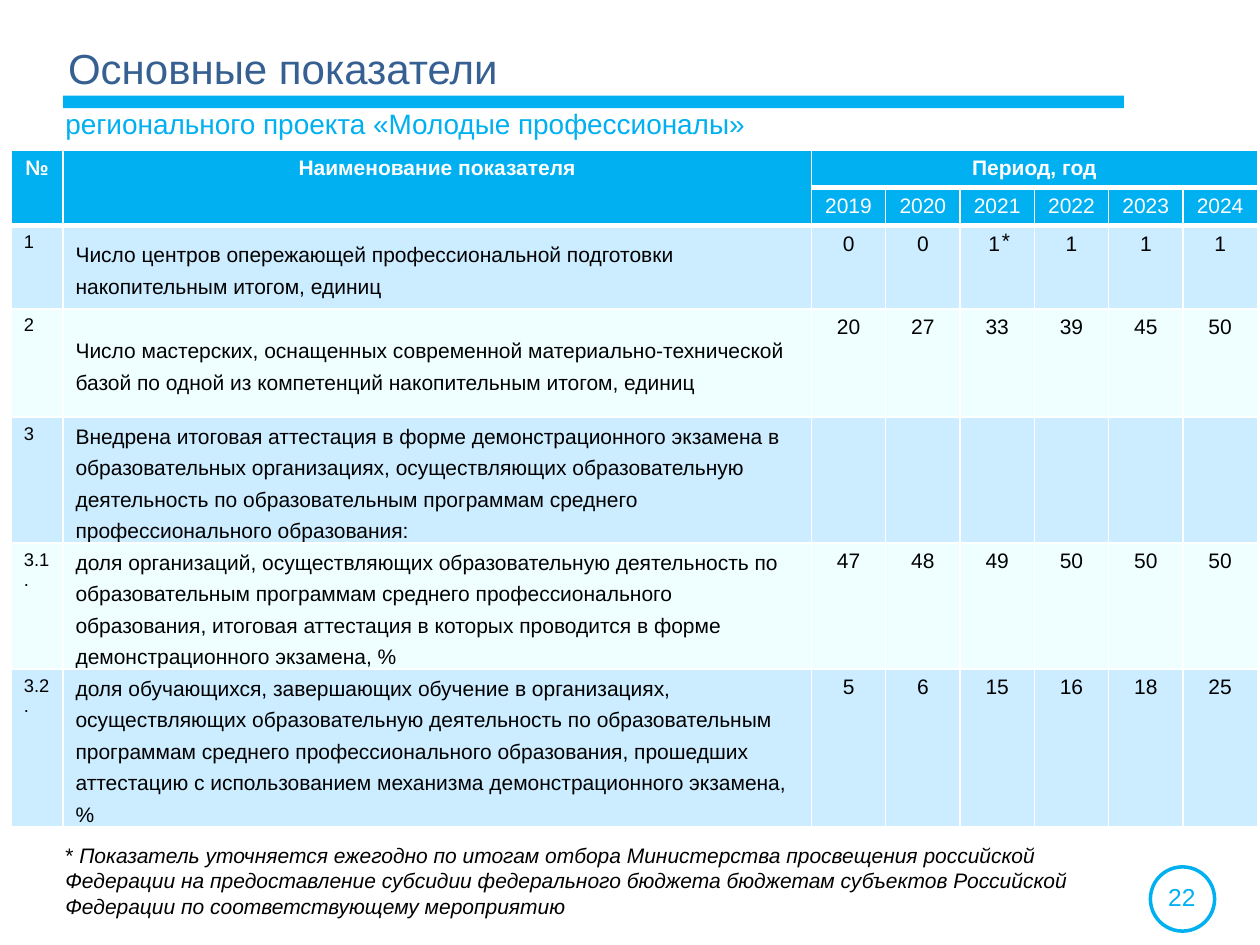
import pptx
import pptx.util
import pptx.dml.color
import pptx.enum.shapes
import pptx.enum.text
import pptx.oxml
import pptx.oxml.ns

Inches = pptx.util.Inches
Pt = pptx.util.Pt
RGBColor = pptx.dml.color.RGBColor
ALIGN = pptx.enum.text.PP_ALIGN
ANCHOR = pptx.enum.text.MSO_ANCHOR
SHAPE = pptx.enum.shapes.MSO_SHAPE

CYAN = RGBColor(0x00, 0xB0, 0xF0)
NAVY = RGBColor(0x37, 0x60, 0x92)
WHITE = RGBColor(0xFF, 0xFF, 0xFF)
BLACK = RGBColor(0x00, 0x00, 0x00)
PALE = RGBColor(0xCC, 0xEC, 0xFF)
MINT = RGBColor(0xEF, 0xFF, 0xFF)


def write(frame, text, size=12, color=BLACK, bold=False, slant=False,
          align=ALIGN.LEFT, anchor=ANCHOR.TOP):
    frame.word_wrap = True
    frame.vertical_anchor = anchor
    para = frame.paragraphs[0]
    para.alignment = align
    run = para.add_run()
    run.text = text
    font = run.font
    font.name = "Arial"
    font.size = Pt(size)
    font.bold = bold
    font.italic = slant
    font.color.rgb = color
    return para


def border(cell, width):
    props = cell._tc.get_or_add_tcPr()
    for side in "LRTB":
        points = width if side == "B" else 1
        props.append(pptx.oxml.parse_xml(
            f'<a:ln{side} {pptx.oxml.ns.nsdecls("a")} w="{Pt(points)}">'
            f'<a:solidFill><a:srgbClr val="{WHITE}"/></a:solidFill></a:ln{side}>'))


deck = pptx.Presentation()
deck.slide_width = Inches(10)
deck.slide_height = Inches(7.5)
slide = deck.slides.add_slide(deck.slide_layouts[5])
shapes = slide.shapes

bar = shapes.add_shape(SHAPE.RECTANGLE, Inches(0.5), Inches(0.76), Inches(8.42), Inches(0.1))
bar.shadow.inherit = False
bar.fill.solid()
bar.fill.fore_color.rgb = CYAN
bar.line.fill.background()

ring = shapes.add_shape(SHAPE.OVAL, Inches(9.13), Inches(6.88), Inches(0.51), Inches(0.51))
ring.shadow.inherit = False
ring.fill.background()
ring.line.color.rgb = CYAN
ring.line.width = Pt(2)

page = shapes.add_textbox(Inches(9.09), Inches(6.95), Inches(0.58), Inches(0.34))
write(page.text_frame, "22", size=14, color=CYAN, align=ALIGN.CENTER)

theme = shapes.add_textbox(Inches(0.42), Inches(0.8), Inches(8.56), Inches(0.49))
write(theme.text_frame, "регионального проекта «Молодые профессионалы»", size=16, color=CYAN)

title = shapes.title
title.left, title.top = Inches(0.44), Inches(0.29)
title.width, title.height = Inches(7.79), Inches(0.64)
write(title.text_frame, "Основные показатели", size=24, color=NAVY)

YEARS = range(2019, 2025)
GOALS = [
    ("1", "Число центров опережающей профессиональной подготовки накопительным итогом, единиц",
     ["0", "0", "1 ⃰", "1", "1", "1"]),
    ("2", "Число мастерских, оснащенных современной материально-технической базой "
     "по одной из компетенций накопительным итогом, единиц",
     ["20", "27", "33", "39", "45", "50"]),
    ("3", "Внедрена итоговая аттестация в форме демонстрационного экзамена в образовательных "
     "организациях, осуществляющих образовательную деятельность по образовательным программам "
     "среднего профессионального образования:",
     [""] * 6),
    ("3.1.", "доля организаций, осуществляющих образовательную деятельность по образовательным "
     "программам среднего профессионального образования, итоговая аттестация в которых "
     "проводится в форме демонстрационного экзамена, %",
     ["47", "48", "49", "50", "50", "50"]),
    ("3.2.", "доля обучающихся, завершающих обучение в организациях, осуществляющих "
     "образовательную деятельность по образовательным программам среднего профессионального "
     "образования, прошедших аттестацию с использованием механизма демонстрационного экзамена, %",
     ["5", "6", "15", "16", "18", "25"]),
]
WIDTHS = [0.41, 5.94] + [0.59] * len(YEARS)
HEIGHTS = [0.29, 0.3, 0.66, 0.86, 1, 1, 1.25]

grid = shapes.add_table(len(HEIGHTS), len(WIDTHS), Inches(0.09), Inches(1.19),
                        Inches(9.91), Inches(5.37)).table
for col, width in zip(grid.columns, WIDTHS):
    col.width = Inches(width)
for row, height in zip(grid.rows, HEIGHTS):
    row.height = Inches(height)

for r, row in enumerate(grid.rows):
    for cell in row.cells:
        border(cell, 3 if r < 2 else 1)
        cell.fill.solid()
        cell.fill.fore_color.rgb = CYAN if r < 2 else (PALE, MINT)[r % 2]

grid.cell(0, 0).merge(grid.cell(1, 0))
grid.cell(0, 1).merge(grid.cell(1, 1))
grid.cell(0, 2).merge(grid.cell(0, 7))
for c, head in enumerate(["№", "Наименование показателя", "Период, год"]):
    write(grid.cell(0, c).text_frame, head, color=WHITE, bold=True, align=ALIGN.CENTER)
for c, year in enumerate(YEARS, 2):
    write(grid.cell(1, c).text_frame, str(year), color=WHITE, align=ALIGN.CENTER)

for r, (mark, name, counts) in enumerate(GOALS, 2):
    write(grid.cell(r, 0).text_frame, mark, size=10.5)
    cell = grid.cell(r, 1)
    para = write(cell.text_frame, name)
    para.line_spacing = Pt(18)
    para._p.get_or_add_pPr().set("marL", str(Inches(0.08)))
    cell.vertical_anchor = ANCHOR.MIDDLE
    cell.margin_left = cell.margin_right = Inches(0.02)
    cell.margin_top = cell.margin_bottom = 0
    for c, count in enumerate(counts, 2):
        if count:
            write(grid.cell(r, c).text_frame, count, align=ALIGN.CENTER)

note = shapes.add_textbox(Inches(0.42), Inches(6.64), Inches(8.39), Inches(0.64))
write(note.text_frame, "* ")
write(note.text_frame, "Показатель уточняется ежегодно по итогам отбора Министерства просвещения "
      "российской Федерации на предоставление субсидии федерального бюджета бюджетам субъектов "
      "Российской Федерации по соответствующему мероприятию", slant=True)

deck.save("out.pptx")
